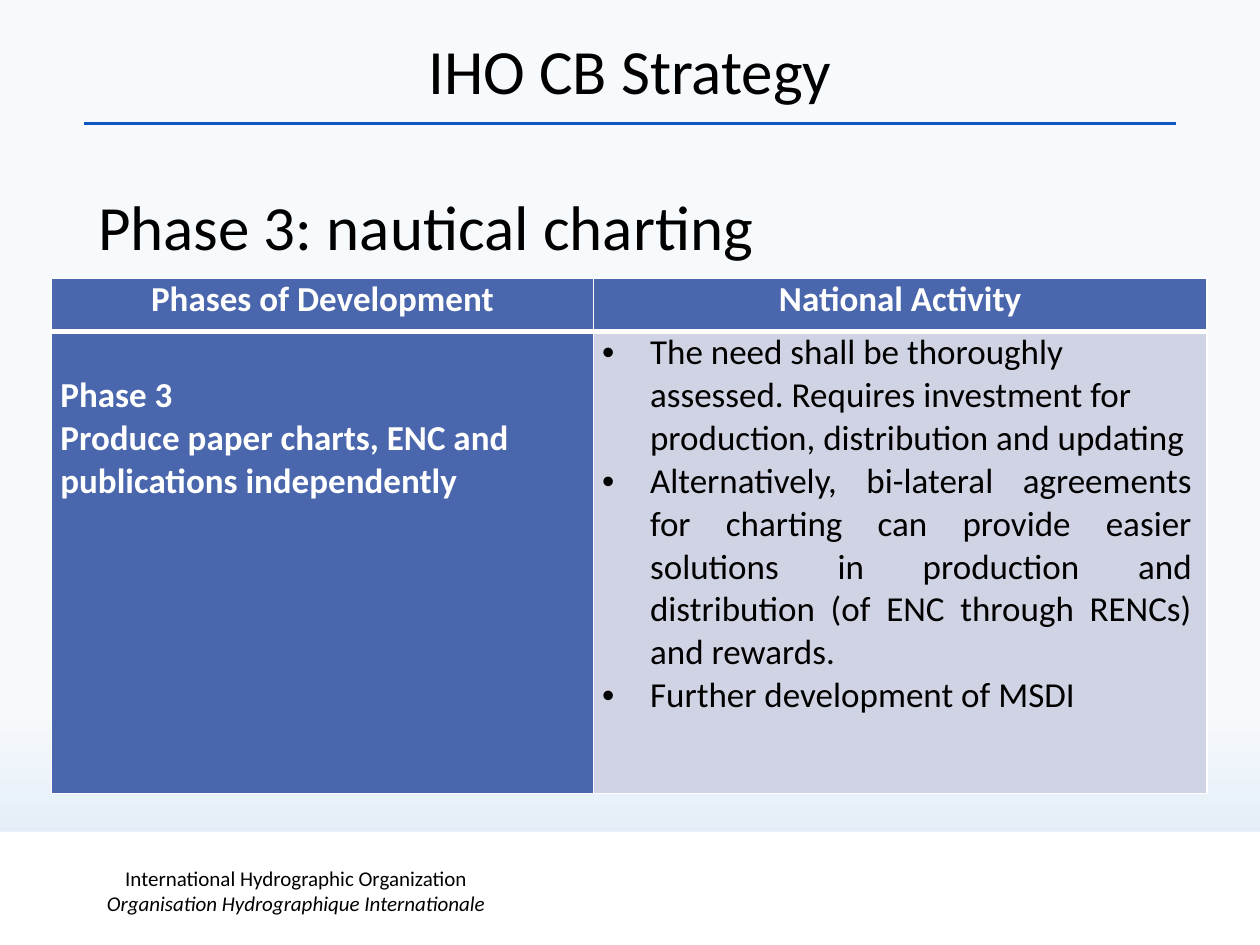
from lxml.etree import SubElement
from pptx import Presentation
from pptx.dml.color import RGBColor
from pptx.enum.shapes import MSO_CONNECTOR, MSO_SHAPE
from pptx.enum.text import MSO_ANCHOR, PP_ALIGN
from pptx.oxml.ns import qn
from pptx.util import Inches, Pt

FONT = "Calibri"
BLACK, WHITE, BLUE, PALE, RULE = "000000", "FFFFFF", "4A66AC", "D0D3E3", "0E58C4"
BACKGROUND = [(0.75, "F7FAFD"), (1, "D0E2F1")]

TITLE = "IHO CB Strategy"
SUBTITLE = "Phase 3: nautical charting"
FOOTER = ["International Hydrographic Organization",
          "Organisation Hydrographique Internationale"]
HEADERS = ["Phases of Development", "National Activity"]
PHASE = ["Phase 3", "Produce paper charts, ENC and publications independently"]
ACTIVITIES = [
    ("The need shall be thoroughly assessed. Requires investment for production, "
     "distribution and updating", PP_ALIGN.LEFT),
    ("Alternatively, bi-lateral agreements for charting can provide easier solutions "
     "in production and distribution (of ENC through RENCs) and rewards.", PP_ALIGN.JUSTIFY),
    ("Further development of MSDI", PP_ALIGN.JUSTIFY),
]
COLUMN_WIDTHS = [4.3, 4.87]
ROW_HEIGHTS = [0.42, 3.67]
LINE_HEIGHT = 0.34


def color(value):
    return RGBColor.from_string(value)


def write(frame, lines, size, ink=BLACK, bold=False, bullets=False, spacing=None):
    """Fill a text frame with (text, alignment) lines."""
    frame.word_wrap = True
    for index, (text, align) in enumerate(lines):
        para = frame.paragraphs[0] if index == 0 else frame.add_paragraph()
        para.text = text
        para.alignment = align
        if spacing:
            para.line_spacing = spacing
        if bullets:
            properties = para._p.get_or_add_pPr()
            properties.set("marL", str(Inches(0.38)))
            properties.set("indent", str(-Inches(0.38)))
            SubElement(properties, qn("a:buFont"), typeface="Arial")
            SubElement(properties, qn("a:buChar"), char="•")
        font = para.font
        font.name, font.size, font.bold = FONT, Pt(size), bold
        font.color.rgb = color(ink)


def add_text(page, place, lines, size, anchor, spacing=None):
    frame = page.shapes.add_textbox(*map(Inches, place)).text_frame
    frame.vertical_anchor = anchor
    write(frame, lines, size, spacing=spacing)
    return frame


def style_cell(cell, fill, bottom_width):
    cell.margin_left = cell.margin_right = Inches(0.07)
    cell.margin_top = cell.margin_bottom = 0
    properties = cell._tc.get_or_add_tcPr()
    for side, width in [("L", 1), ("R", 1), ("T", 1), ("B", bottom_width)]:
        border = SubElement(properties, qn(f"a:ln{side}"), w=str(Pt(width)))
        SubElement(SubElement(border, qn("a:solidFill")), qn("a:srgbClr"), val=WHITE)
    cell.fill.solid()
    cell.fill.fore_color.rgb = color(fill)


def add_table(page):
    table = page.shapes.add_table(
        2, 2, Inches(0.41), Inches(2.21),
        Inches(sum(COLUMN_WIDTHS)), Inches(sum(ROW_HEIGHTS))).table
    for column, width in zip(table.columns, COLUMN_WIDTHS):
        column.width = Inches(width)
    for row, height in zip(table.rows, ROW_HEIGHTS):
        row.height = Inches(height)
    for index, header in enumerate(HEADERS):
        cell = table.cell(0, index)
        style_cell(cell, BLUE, 3)
        write(cell.text_frame, [(header, PP_ALIGN.CENTER)], 20, WHITE, bold=True)
    phase, activity = table.cell(1, 0), table.cell(1, 1)
    style_cell(phase, BLUE, 1)
    phase.margin_top = Inches(LINE_HEIGHT)
    write(phase.text_frame, [(line, PP_ALIGN.LEFT) for line in PHASE], 20, WHITE, bold=True)
    style_cell(activity, PALE, 1)
    activity.margin_right = Inches(0.12)
    write(activity.text_frame, ACTIVITIES, 20, bullets=True)


def main():
    deck = Presentation()
    deck.slide_width, deck.slide_height = Inches(10), Inches(7.5)
    page = deck.slides.add_slide(deck.slide_layouts[6])

    fill = page.background.fill
    fill.gradient()
    fill.gradient_angle = 270
    for stop, (position, value) in zip(fill.gradient_stops, BACKGROUND):
        stop.position = position
        stop.color.rgb = color(value)

    rule = page.shapes.add_connector(
        MSO_CONNECTOR.STRAIGHT, Inches(0.67), Inches(0.98), Inches(9.33), Inches(0.98))
    rule.line.color.rgb = color(RULE)
    rule.line.width = Pt(2.25)
    SubElement(rule._element.spPr, qn("a:effectLst"))

    band = page.shapes.add_shape(
        MSO_SHAPE.RECTANGLE, 0, Inches(6.6), Inches(10), Inches(0.9))
    band.shadow.inherit = False
    band.fill.solid()
    band.fill.fore_color.rgb = color(WHITE)
    band.line.fill.background()

    footer = add_text(page, (0.66, 6.87, 3.38, 0.4),
                      [(line, PP_ALIGN.CENTER) for line in FOOTER], 12, MSO_ANCHOR.MIDDLE)
    footer.paragraphs[1].font.italic = True
    add_text(page, (0.68, 1.51, 8.67, 0.7), [(SUBTITLE, PP_ALIGN.LEFT)], 36,
             MSO_ANCHOR.TOP, 0.9)
    add_text(page, (0.68, 0.21, 8.64, 0.7), [(TITLE, PP_ALIGN.CENTER)], 36,
             MSO_ANCHOR.BOTTOM, 0.9)
    add_table(page)
    deck.save("out.pptx")


if __name__ == "__main__":
    main()
